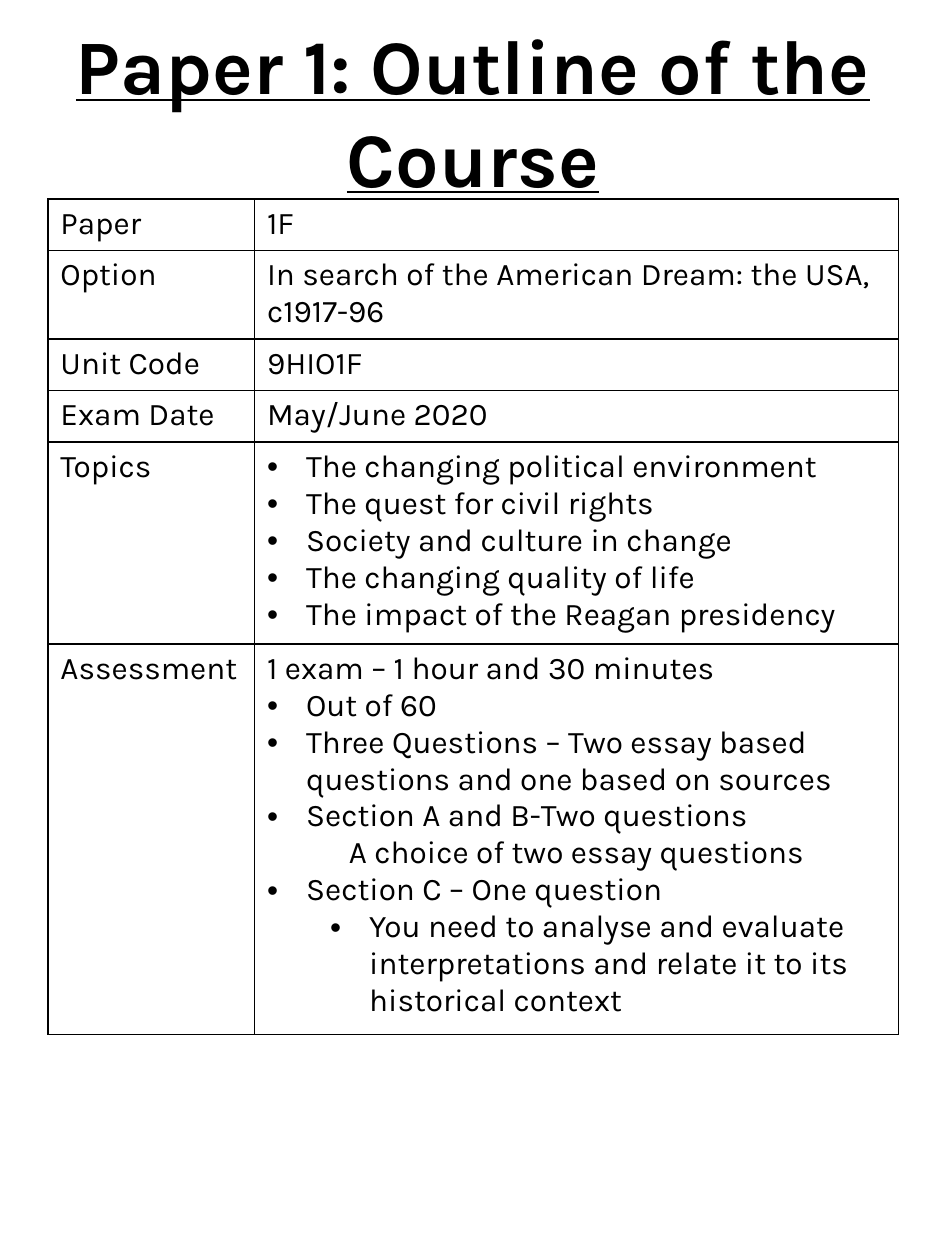
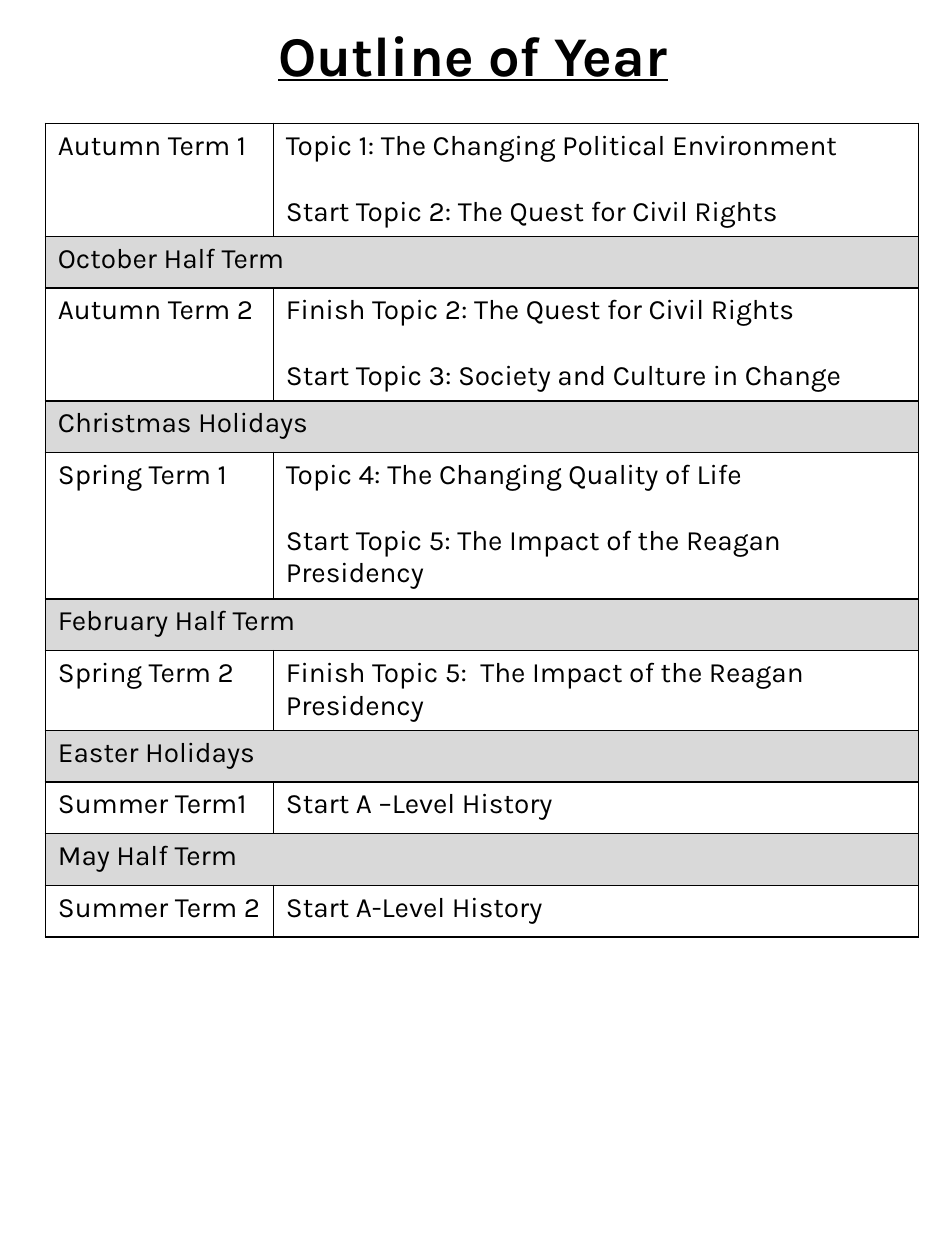
import pptx
import pptx.util
import pptx.dml.color
import pptx.enum.text
import pptx.oxml
import pptx.oxml.ns
from pptx.util import Inches

FONT, BLACK, GREY = "Karla", "000000", "D9D9D9"

# Paragraphs are (kind, text); rows of one item span the whole table
COURSE = [
    ("Paper", [("plain", "1F")]),
    ("Option", [("plain", "In search of the American Dream: the USA, c1917-96")]),
    ("Unit Code", [("plain", "9HIO1F")]),
    ("Exam Date", [("plain", "May/June 2020")]),
    ("Topics", [
        ("bullet", "The changing political environment"),
        ("bullet", "The quest for civil rights"),
        ("bullet", "Society and culture in change"),
        ("bullet", "The changing quality of life"),
        ("bullet", "The impact of the Reagan presidency"),
    ]),
    ("Assessment", [
        ("plain", "1 exam – 1 hour and 30 minutes"),
        ("bullet", "Out of 60"),
        ("bullet", "Three Questions – Two essay based questions and one based on sources"),
        ("bullet", "Section A and B-Two questions"),
        ("inset", "A choice of two essay questions"),
        ("bullet", "Section C – One question"),
        ("sub", "You need to analyse and evaluate interpretations "
                "and relate it to its historical context"),
    ]),
]
YEAR = [
    ("Autumn Term 1", [("plain", "Topic 1: The Changing Political Environment"),
                       ("apart", "Start Topic 2: The Quest for Civil Rights")]),
    ("October Half Term",),
    ("Autumn Term 2", [("plain", "Finish Topic 2: The Quest for Civil Rights"),
                       ("apart", "Start Topic 3: Society and Culture in Change")]),
    ("Christmas Holidays",),
    ("Spring Term 1", [("plain", "Topic 4: The Changing Quality of Life"),
                       ("apart", "Start Topic 5: The Impact of the Reagan Presidency")]),
    ("February Half Term",),
    ("Spring Term 2", [("plain", "Finish Topic 5:  The Impact of the Reagan Presidency")]),
    ("Easter Holidays",),
    ("Summer Term1", [("plain", "Start A –Level History")]),
    ("May Half Term",),
    ("Summer Term 2", [("plain", "Start A-Level History")]),
]
PAGES = [
    dict(title="Paper 1: Outline of the Course", size=44, top=0.04, high=1.67,
         rows=COURSE, text=18, spot=(0.38, 1.58), cols=(1.64, 5.11)),
    dict(title="Outline of Year", size=32, top=-0.2, high=1.26,
         rows=YEAR, text=16, spot=(0.36, 0.98), cols=(1.81, 5.12)),
]
# Left margin, first-line indent and bullet of each kind
KINDS = {
    "plain": (0, 0, False),
    "apart": (0, 0, False),
    "inset": (0.65, 0, False),
    "bullet": (0.31, -0.31, True),
    "sub": (0.81, -0.31, True),
}
ROW = 0.41


def color(code):
    return pptx.dml.color.RGBColor.from_string(code)


def style(para, size, strong=False):
    font = para.font
    font.name, font.size = FONT, pptx.util.Pt(size)
    font.bold = font.underline = strong
    font.color.rgb = color(BLACK)


def add_title(slide, page):
    box = slide.shapes.add_textbox(Inches(0.38), Inches(page["top"]),
                                   Inches(6.75), Inches(page["high"]))
    frame = box.text_frame
    frame.word_wrap = True
    frame.vertical_anchor = pptx.enum.text.MSO_ANCHOR.MIDDLE
    para = frame.paragraphs[0]
    para.text = page["title"]
    para.alignment = pptx.enum.text.PP_ALIGN.CENTER
    style(para, page["size"], True)


def write(cell, paras, size):
    frame = cell.text_frame
    for num, (kind, text) in enumerate(paras):
        para = frame.add_paragraph() if num else frame.paragraphs[0]
        para.text = text
        left, first, dot = KINDS[kind]
        props = para._p.get_or_add_pPr()
        props.set("marL", str(Inches(left)))
        props.set("indent", str(Inches(first)))
        if kind == "sub":
            para.level = 1
        if kind == "apart":
            para.space_before = pptx.util.Pt(size * 1.18)
        if dot:
            space = pptx.oxml.ns.nsdecls("a")
            for tag in ('buFont %s typeface="Arial"', 'buChar %s char="•"'):
                props.append(pptx.oxml.parse_xml(f"<a:{tag % space}/>"))
        style(para, size)


def border(cell):
    props = cell._tc.get_or_add_tcPr()
    for num, side in enumerate("LRTB"):
        props.insert(num, pptx.oxml.parse_xml(
            f'<a:ln{side} {pptx.oxml.ns.nsdecls("a")} w="12700"><a:solidFill>'
            f'<a:srgbClr val="{BLACK}"/></a:solidFill></a:ln{side}>'))


def add_grid(slide, page):
    rows, cols = page["rows"], page["cols"]
    left, top = page["spot"]
    table = slide.shapes.add_table(
        len(rows), len(cols), Inches(left), Inches(top),
        Inches(sum(cols)), Inches(ROW * len(rows))).table
    table.first_row = table.horz_banding = False
    for col, width in zip(table.columns, cols):
        col.width = Inches(width)
    for num, (label, *body) in enumerate(rows):
        table.rows[num].height = Inches(ROW)
        head, side = table.cell(num, 0), table.cell(num, 1)
        for cell in (head, side):
            if body:
                cell.fill.background()
            else:
                cell.fill.solid()
                cell.fill.fore_color.rgb = color(GREY)
            border(cell)
        write(head, [("plain", label)], page["text"])
        if body:
            write(side, body[0], page["text"])
        else:
            head.merge(side)


def main():
    deck = pptx.Presentation()
    deck.slide_width, deck.slide_height = Inches(7.5), Inches(10)
    for page in PAGES:
        slide = deck.slides.add_slide(deck.slide_layouts[6])
        add_title(slide, page)
        add_grid(slide, page)
    deck.save("out.pptx")


if __name__ == "__main__":
    main()
